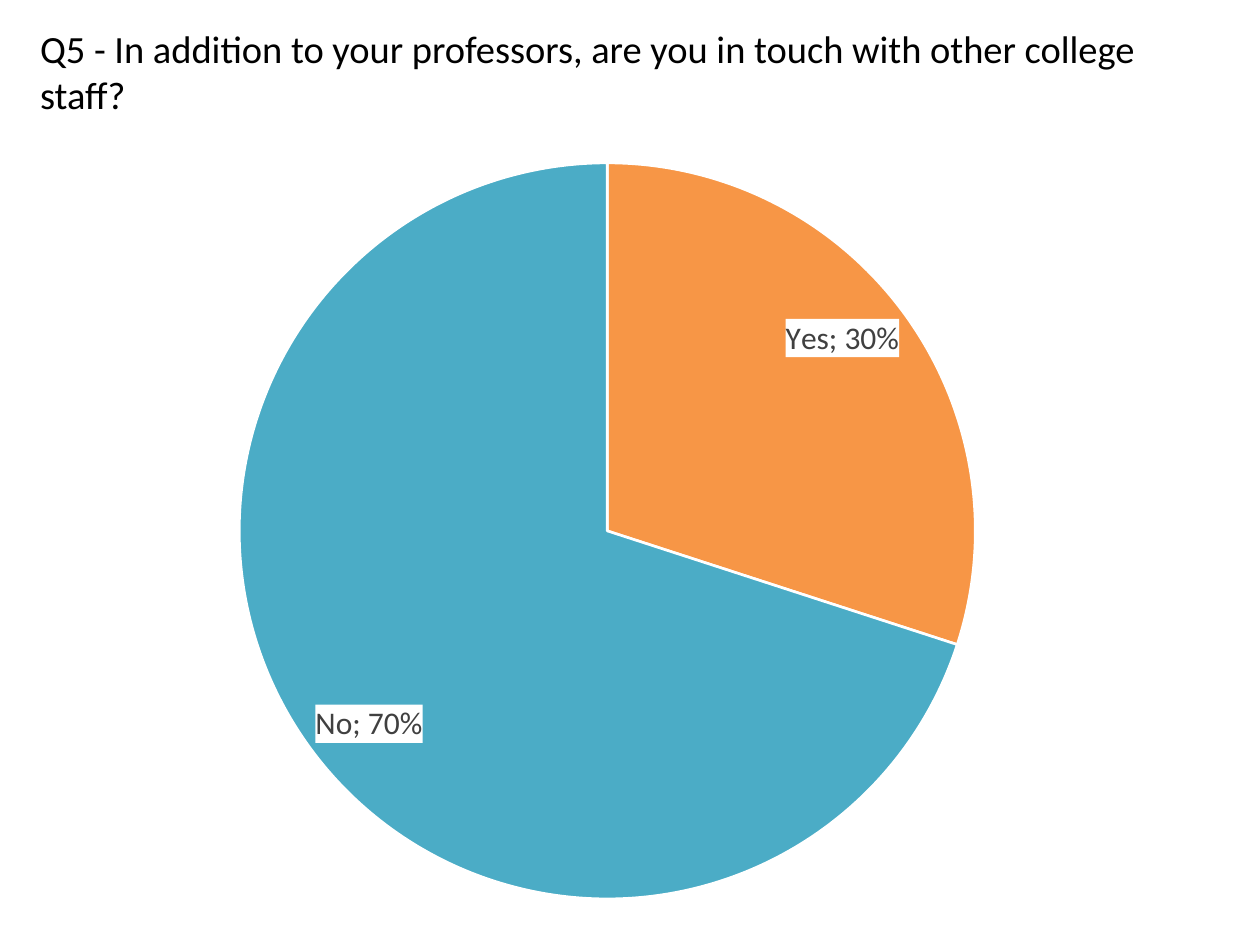
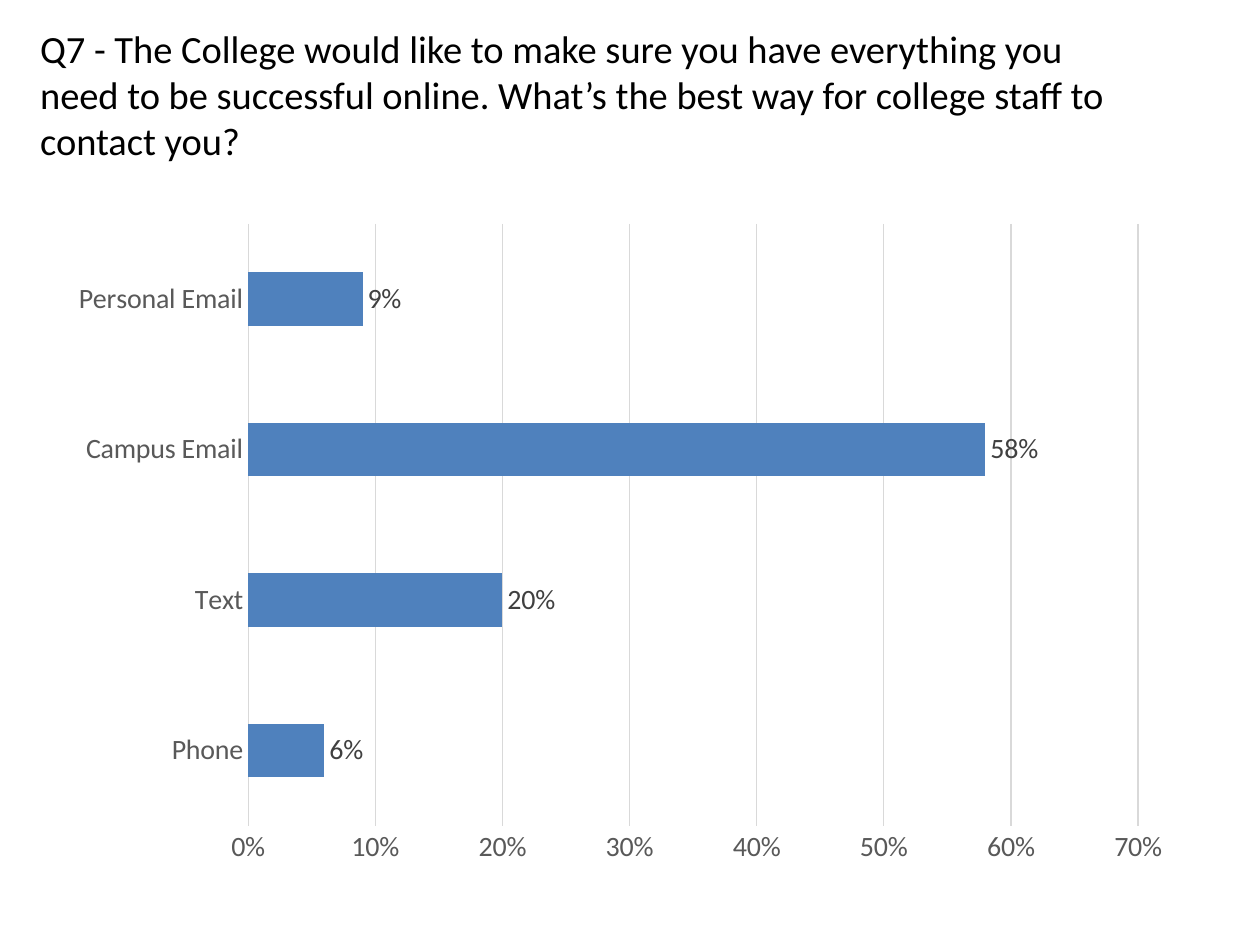
"""Build two survey result slides: a pie chart and a bar chart."""
from lxml import etree
from pptx import Presentation
from pptx.chart.data import CategoryChartData
from pptx.dml.color import RGBColor
from pptx.enum.chart import XL_CHART_TYPE, XL_LABEL_POSITION, XL_TICK_MARK
from pptx.oxml import parse_xml
from pptx.oxml.ns import nsdecls, qn
from pptx.util import Inches, Pt

PIE, BAR = XL_CHART_TYPE.PIE, XL_CHART_TYPE.BAR_CLUSTERED
INSIDE_END, OUTSIDE_END = XL_LABEL_POSITION.INSIDE_END, XL_LABEL_POSITION.OUTSIDE_END
NO_TICK = XL_TICK_MARK.NONE

FONT = "Calibri"
BLACK = RGBColor(0x00, 0x00, 0x00)
WHITE = RGBColor(0xFF, 0xFF, 0xFF)
LABEL_GREY = RGBColor(0x40, 0x40, 0x40)
AXIS_GREY = RGBColor(0x59, 0x59, 0x59)
GRID_GREY = RGBColor(0xD9, 0xD9, 0xD9)
ORANGE = RGBColor(0xF7, 0x96, 0x46)
TEAL = RGBColor(0x4B, 0xAC, 0xC6)
BLUE = RGBColor(0x4F, 0x81, 0xBD)

QUESTION_BOX = (0.22, 0.15, 9, 0.4)
STAFF_CONTACT = {
    "question": "Q5 - In addition to your professors, are you in touch with other college staff?",
    "answers": {"Yes": 0.3, "No": 0.7},
    "kind": PIE, "box": (0.37, 1.17, 8.99, 6.15), "plot_area": (0.17, 0.02, 0.65, 0.95),
    "size": 18, "label_position": INSIDE_END,
}
CONTACT_METHOD = {
    "question": "Q7 - The College would like to make sure you have everything you need to be "
                "successful online. What’s the best way for college staff to contact you?",
    "answers": {"Phone": 0.06, "Text": 0.2, "Campus Email": 0.58, "Personal Email": 0.09},
    "kind": BAR, "box": (0.45, 1.67, 8.94, 5.31), "plot_area": (0.17, 0.02, 0.79, 0.9),
    "size": 16, "label_position": OUTSIDE_END,
}
ANSWER_COLOURS = (ORANGE, TEAL)


def set_font(font, size, colour):
    font.name, font.size, font.bold = FONT, Pt(size), False
    font.color.rgb = colour


def place_plot(chart, plot_area):
    area = chart.element.find(".//" + qn("c:plotArea"))
    for old in area.findall(qn("c:layout")):
        area.remove(old)
    layout = etree.Element(qn("c:layout"))
    manual = etree.SubElement(layout, qn("c:manualLayout"))
    settings = [("layoutTarget", "inner"), ("xMode", "edge"), ("yMode", "edge")]
    settings += zip("xywh", map(str, plot_area))
    for tag, value in settings:
        etree.SubElement(manual, qn("c:" + tag)).set("val", value)
    area.insert(0, layout)


def add_question(prs, survey):
    slide = prs.slides.add_slide(prs.slide_layouts[6])
    frame = slide.shapes.add_textbox(*map(Inches, QUESTION_BOX)).text_frame
    frame.word_wrap = True
    frame.text = survey["question"]
    set_font(frame.paragraphs[0].runs[0].font, 22, BLACK)

    data = CategoryChartData(number_format="0%")
    data.categories = list(survey["answers"])
    data.add_series("Series 1", list(survey["answers"].values()))
    chart = slide.shapes.add_chart(survey["kind"], *map(Inches, survey["box"]), data).chart
    chart.has_title = chart.has_legend = False
    set_font(chart.font, survey["size"], BLACK)
    place_plot(chart, survey["plot_area"])

    labels = chart.plots[0].series[0].data_labels
    set_font(labels.font, survey["size"], LABEL_GREY)
    labels.number_format, labels.number_format_is_linked = "0%", False
    labels.show_value = True
    labels.position = survey["label_position"]
    return chart


def style_pie(chart):
    plot = chart.plots[0]
    plot.vary_by_categories = True
    series = plot.series[0]
    for index, colour in enumerate(ANSWER_COLOURS):
        slice_format = series.points[index].format
        slice_format.fill.solid()
        slice_format.fill.fore_color.rgb = colour
        slice_format.line.color.rgb = WHITE
        slice_format.line.width = Pt(1.5)
    series.data_labels.show_category_name = True
    labels = chart.element.find(".//" + qn("c:dLbls"))
    labels.find(qn("c:txPr")).addprevious(parse_xml(
        f'<c:spPr {nsdecls("c", "a")}><a:solidFill><a:srgbClr val="{WHITE}"/></a:solidFill></c:spPr>'))
    separator = etree.Element(qn("c:separator"))
    separator.text = "; "
    labels.find(qn("c:showBubbleSize")).addnext(separator)


def style_bars(chart):
    plot = chart.plots[0]
    plot.vary_by_categories = False
    plot.gap_width = 182
    fill = plot.series[0].format.fill
    fill.solid()
    fill.fore_color.rgb = BLUE

    methods, shares = chart.category_axis, chart.value_axis
    for axis in (methods, shares):
        axis.major_tick_mark = axis.minor_tick_mark = NO_TICK
        set_font(axis.tick_labels.font, 16, AXIS_GREY)
    shares.minimum_scale, shares.maximum_scale, shares.major_unit = 0, 0.7, 0.1
    shares.tick_labels.number_format = "0%"
    shares.tick_labels.number_format_is_linked = False
    shares.format.line.fill.background()
    for line in (methods.format.line, shares.major_gridlines.format.line):
        line.color.rgb = GRID_GREY
        line.width = Pt(0.75)


def main():
    prs = Presentation()
    prs.slide_width, prs.slide_height = Inches(10), Inches(7.5)
    style_pie(add_question(prs, STAFF_CONTACT))
    style_bars(add_question(prs, CONTACT_METHOD))
    prs.save("out.pptx")


if __name__ == "__main__":
    main()
